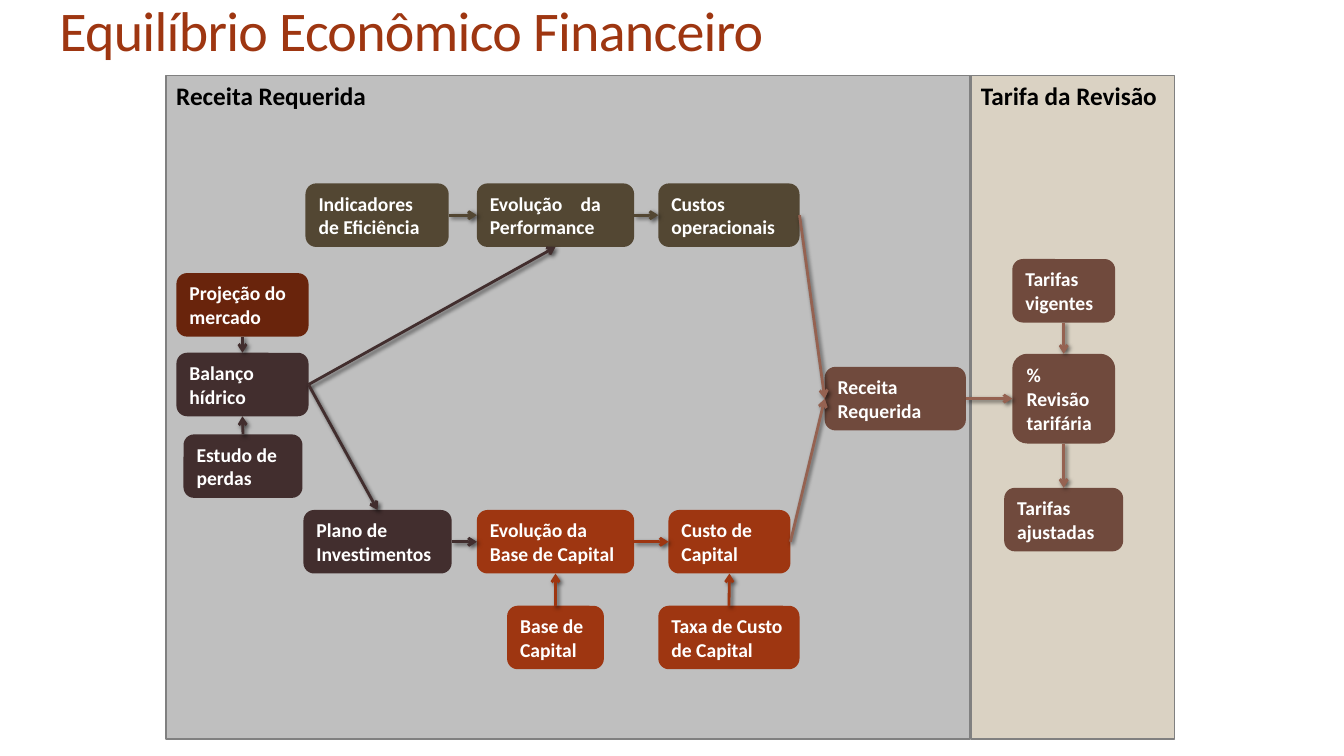
from lxml import etree
from pptx import Presentation
from pptx.dml.color import RGBColor
from pptx.enum.shapes import MSO_CONNECTOR, MSO_SHAPE
from pptx.enum.text import MSO_ANCHOR, MSO_AUTO_SIZE, PP_ALIGN
from pptx.oxml import parse_xml
from pptx.oxml.ns import nsdecls, qn
from pptx.util import Inches, Pt

STRAIGHT = MSO_CONNECTOR.STRAIGHT
RECT, ROUNDED = MSO_SHAPE.RECTANGLE, MSO_SHAPE.ROUNDED_RECTANGLE
TOP, MIDDLE = MSO_ANCHOR.TOP, MSO_ANCHOR.MIDDLE
GROW, LEFT = MSO_AUTO_SIZE.SHAPE_TO_FIT_TEXT, PP_ALIGN.LEFT

COLORS = {
    "rust": "9E3611", "dark_rust": "69240C", "plum": "422E2E",
    "olive": "534733", "brown": "704A3D", "light_brown": "956251",
    "gray": "BFBFBF", "sand": "DAD2C3", "border": "808080",
    "black": "000000", "white": "FFFFFF",
}
# Connection sites of a rectangle
SITES = {"top": 0, "left": 1, "bottom": 2, "right": 3}
SHADOW = (
    f'<a:effectLst {nsdecls("a")}>'
    '<a:outerShdw blurRad="38100" dist="25400" dir="2700000" rotWithShape="0">'
    '<a:srgbClr val="000000"><a:alpha val="60000"/></a:srgbClr>'
    '</a:outerShdw></a:effectLst>'
)


class FlowSlide:
    font = "Calibri"

    def __init__(self, prs):
        self.slide = prs.slides.add_slide(prs.slide_layouts[6])
        self.boxes = {}

    def color(self, name):
        return RGBColor.from_string(COLORS[name])

    def set_text(self, sp, text, size, color, bold=True, anchor=MIDDLE, tab=None):
        tf = sp.text_frame
        tf.word_wrap = True
        tf.vertical_anchor = anchor
        p = tf.paragraphs[0]
        p.text = text
        p.alignment = LEFT
        if tab:
            tabs = etree.SubElement(p._p.get_or_add_pPr(), qn("a:tabLst"))
            etree.SubElement(tabs, qn("a:tab"), pos=str(Inches(tab)), algn="l")
        for r in p.runs:
            r.font.name = self.font
            r.font.size = Pt(size)
            r.font.bold = bold
            r.font.color.rgb = self.color(color)
        return p

    def title(self, text):
        sp = self.slide.shapes.add_textbox(
            Inches(0.49), Inches(0.01), Inches(12.38), Inches(0.43))
        p = self.set_text(sp, text, 40, "rust", bold=False, anchor=TOP)
        p.line_spacing = 0.85
        p.runs[0].font._element.set("spc", "-50")

    def shape(self, kind, x, y, w, h, fill):
        sp = self.slide.shapes.add_shape(
            kind, Inches(x), Inches(y), Inches(w), Inches(h))
        sp.shadow.inherit = False
        sp.fill.solid()
        sp.fill.fore_color.rgb = self.color(fill)
        return sp

    def panel(self, text, x, w, fill):
        sp = self.shape(RECT, x, 0.75, w, 6.58, fill)
        sp.line.color.rgb = self.color("border")
        sp.line.width = Pt(1.25)
        self.set_text(sp, text, 18, "black", anchor=TOP)

    def box(self, key, text, x, y, w, fill, h=0.63, tab=None):
        sp = self.shape(ROUNDED, x, y, w, h, fill)
        sp.line.fill.background()
        self.set_text(sp, text, 14, "white", tab=tab)
        sp.text_frame.auto_size = GROW
        self.boxes[key] = sp

    def arrow(self, start, start_side, end, end_side, color):
        line = self.slide.shapes.add_connector(STRAIGHT, 0, 0, 0, 0)
        line.begin_connect(self.boxes[start], SITES[start_side])
        line.end_connect(self.boxes[end], SITES[end_side])
        line.line.color.rgb = self.color(color)
        line.line.width = Pt(2)
        etree.SubElement(line.line._get_or_add_ln(), qn("a:tailEnd"), type="arrow")
        line._element.spPr.append(parse_xml(SHADOW))


def main():
    prs = Presentation()
    prs.slide_width, prs.slide_height = Inches(13.33), Inches(7.5)
    s = FlowSlide(prs)

    # Background panels
    s.panel("Tarifa da Revisão", 9.63, 2.02, "sand")
    s.panel("Receita Requerida", 1.65, 7.97, "gray")

    # Market and water balance
    s.box("mercado", "Projeção do mercado", 1.75, 2.71, 1.31, "dark_rust")
    s.box("balanço", "Balanço hídrico", 1.75, 3.5, 1.31, "plum")
    s.box("perdas", "Estudo de perdas", 1.82, 4.31, 1.18, "plum")

    # Operating costs row
    row = 1.82
    s.box("indicadores", "Indicadores de Eficiência", 3.03, row, 1.42, "olive")
    s.box("performance", "Evolução\tda Performance", 4.73, row, 1.56, "olive", tab=0.9)
    s.box("custos", "Custos operacionais", 6.53, row, 1.4, "olive")

    # Capital rows
    row, inputs = 5.06, 6.01
    s.box("plano", "Plano de Investimentos", 3.01, row, 1.47, "plum")
    s.box("evolução", "Evolução da Base de Capital", 4.73, row, 1.56, "rust")
    s.box("capital", "Custo de Capital", 6.63, row, 1.21, "rust")
    s.box("base", "Base de Capital", 5.03, inputs, 0.96, "rust")
    s.box("taxa", "Taxa de Custo de Capital", 6.53, inputs, 1.4, "rust")

    # Revenue and tariffs
    s.box("receita", "Receita Requerida", 8.18, 3.64, 1.4, "brown")
    s.box("vigentes", "Tarifas vigentes", 10.04, 2.57, 1.02, "brown")
    s.box("revisão", "% Revisão tarifária", 10.04, 3.51, 1.02, "brown", h=0.89)
    s.box("ajustadas", "Tarifas ajustadas", 9.96, 4.84, 1.18, "brown")

    # Arrows
    for link in (
        ("mercado", "bottom", "balanço", "top", "plum"),
        ("perdas", "top", "balanço", "bottom", "plum"),
        ("balanço", "right", "performance", "bottom", "plum"),
        ("balanço", "right", "plano", "top", "plum"),
        ("plano", "right", "evolução", "left", "plum"),
        ("indicadores", "right", "performance", "left", "olive"),
        ("performance", "right", "custos", "left", "olive"),
        ("evolução", "right", "capital", "left", "rust"),
        ("base", "top", "evolução", "bottom", "rust"),
        ("taxa", "top", "capital", "bottom", "rust"),
        ("custos", "right", "receita", "left", "light_brown"),
        ("capital", "right", "receita", "left", "light_brown"),
        ("receita", "right", "revisão", "left", "light_brown"),
        ("vigentes", "bottom", "revisão", "top", "light_brown"),
        ("revisão", "bottom", "ajustadas", "top", "light_brown"),
    ):
        s.arrow(*link)

    # Title
    s.title("Equilíbrio Econômico Financeiro")

    prs.save("out.pptx")


if __name__ == "__main__":
    main()
